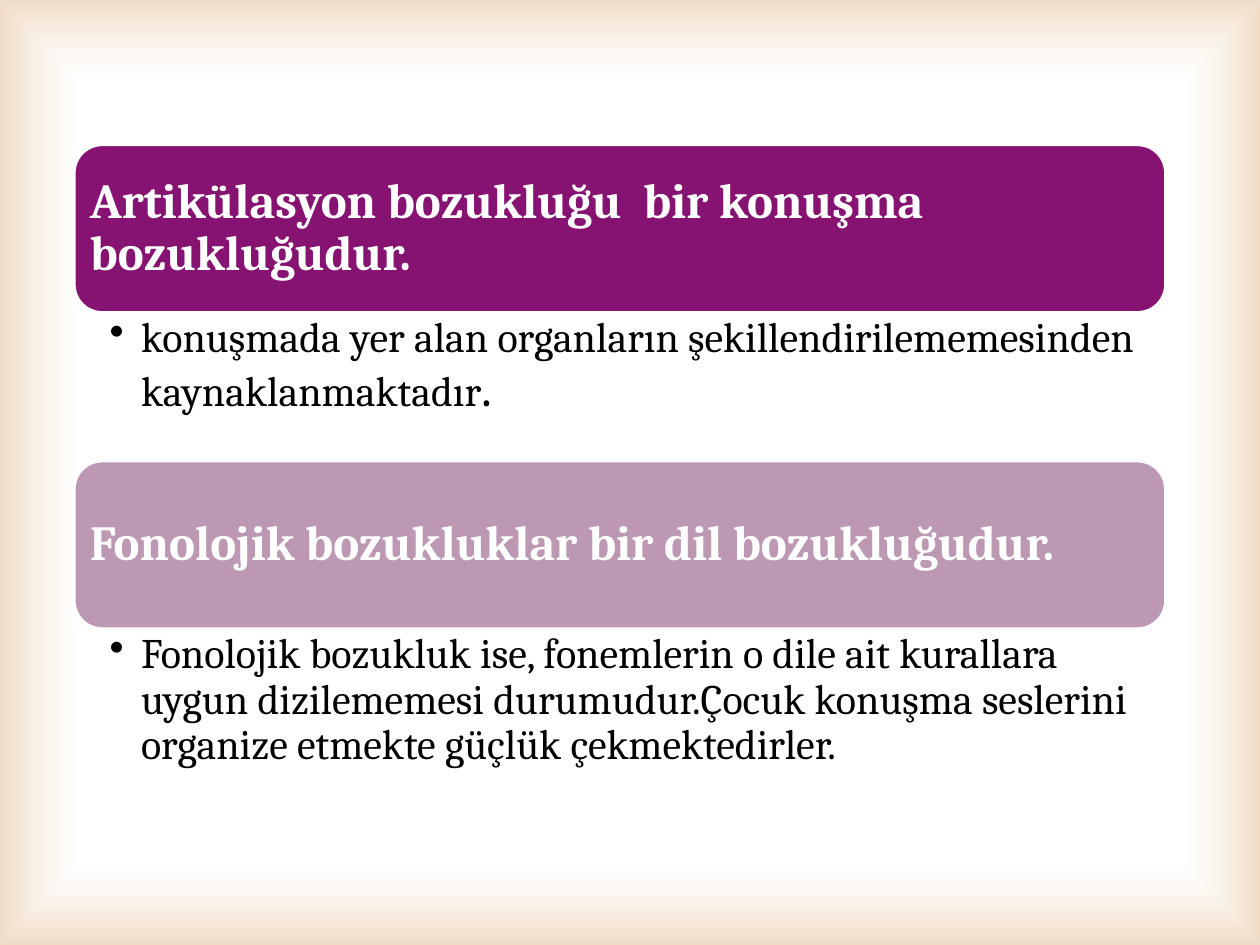
import pptx
import pptx.util
import pptx.oxml
import pptx.oxml.ns
import pptx.dml.color
import pptx.enum.shapes
import pptx.enum.text

Inches, Pt = pptx.util.Inches, pptx.util.Pt
KIND = pptx.enum.shapes.MSO_SHAPE
ALIGN = pptx.enum.text.PP_ALIGN
ANCHOR = pptx.enum.text.MSO_ANCHOR

# Content: heading, fill, body runs as (text, size name)
TOPICS = [
    ("Artikülasyon bozukluğu  bir konuşma bozukluğudur.", "plum",
     [("konuşmada yer alan organların şekillendirilememesinden "
       "kaynaklanmaktadır", "body"), (".", "stop")]),
    ("Fonolojik bozukluklar bir dil bozukluğudur.", "mauve",
     [("Fonolojik bozukluk ise, fonemlerin o dile ait kurallara uygun "
       "dizilememesi durumudur.Çocuk konuşma seslerini organize etmekte "
       "güçlük çekmektedirler.", "body")]),
]

THEME = {
    "font": "Cambria",
    "size": {"head": 28, "body": 24, "stop": 30},
    "color": {"plum": "861271", "mauve": "BC98B2", "white": "FFFFFF",
              "black": "000000", "edge": "BF6500"},
}

# Layout in inches
WIDE, HIGH = 10, 7.5
LEFT, TOP, SPAN = 0.59, 1.15, 8.66
BAR, STEP, BODY = 1.33, 2.51, 1.2


def color(name):
    return pptx.dml.color.RGBColor.from_string(THEME["color"][name])


def margins(frame, left, top, right, low):
    frame.word_wrap = True
    frame.margin_left, frame.margin_top = Inches(left), Inches(top)
    frame.margin_right, frame.margin_bottom = Inches(right), Inches(low)


def style(para, size, ink, bold=False):
    para.alignment = ALIGN.LEFT
    para.line_spacing = 0.9
    para.font.name = THEME["font"]
    para.font.size = Pt(THEME["size"][size])
    para.font.bold = bold
    para.font.color.rgb = color(ink)


def add_glow(slide):
    """Full-slide gradient that fades from a white centre to a warm edge."""
    glow = slide.shapes.add_shape(KIND.RECTANGLE, 0, 0, Inches(WIDE), Inches(HIGH))
    glow.shadow.inherit = False
    glow.line.fill.background()
    stops = "".join(
        f'<a:gs pos="{pos}000"><a:srgbClr val="{THEME["color"][name]}">'
        f'<a:alpha val="{alpha}000"/></a:srgbClr></a:gs>'
        for pos, name, alpha in [(83, "white", 11), (100, "edge", 23)])
    fill = pptx.oxml.parse_xml(
        f'<a:gradFill {pptx.oxml.ns.nsdecls("a")}><a:gsLst>{stops}</a:gsLst>'
        '<a:path path="rect"><a:fillToRect l="50000" t="50000" r="50000" '
        'b="50000"/></a:path></a:gradFill>')
    props = glow._element.spPr
    props.find(pptx.oxml.ns.qn("a:prstGeom")).addnext(fill)


def add_bar(slide, top, text, fill):
    bar = slide.shapes.add_shape(KIND.ROUNDED_RECTANGLE, Inches(LEFT), Inches(top),
                                 Inches(SPAN), Inches(BAR))
    bar.shadow.inherit = False
    bar.fill.solid()
    bar.fill.fore_color.rgb = color(fill)
    bar.line.color.rgb = color("white")
    bar.line.width = Pt(1.5)
    frame = bar.text_frame
    margins(frame, 0.06, 0.06, 0.06, 0.06)
    frame.vertical_anchor = ANCHOR.MIDDLE
    para = frame.paragraphs[0]
    para.text = text
    style(para, "head", "white", bold=True)


def add_body(slide, top, runs):
    box = slide.shapes.add_textbox(Inches(LEFT), Inches(top), Inches(SPAN), Inches(BODY))
    margins(box.text_frame, 0.28, 0.03, 0.19, 0.03)
    para = box.text_frame.paragraphs[0]
    style(para, "body", "black")
    for text, size in runs:
        run = para.add_run()
        run.text = text
        if size != "body":
            run.font.size = Pt(THEME["size"][size])
    # Hanging bullet
    props = para._p.get_or_add_pPr()
    props.set("marL", str(Inches(0.25)))
    props.set("indent", str(-Inches(0.25)))
    mark = pptx.oxml.parse_xml(f'<a:buChar {pptx.oxml.ns.nsdecls("a")} char="•"/>')
    props.find(pptx.oxml.ns.qn("a:defRPr")).addprevious(mark)


def main():
    deck = pptx.Presentation()
    deck.slide_width, deck.slide_height = Inches(WIDE), Inches(HIGH)
    slide = deck.slides.add_slide(deck.slide_layouts[6])
    add_glow(slide)
    for row, (head, fill, runs) in enumerate(TOPICS):
        top = TOP + row * STEP
        add_bar(slide, top, head, fill)
        add_body(slide, top + BAR, runs)
    deck.save("out.pptx")


if __name__ == "__main__":
    main()
